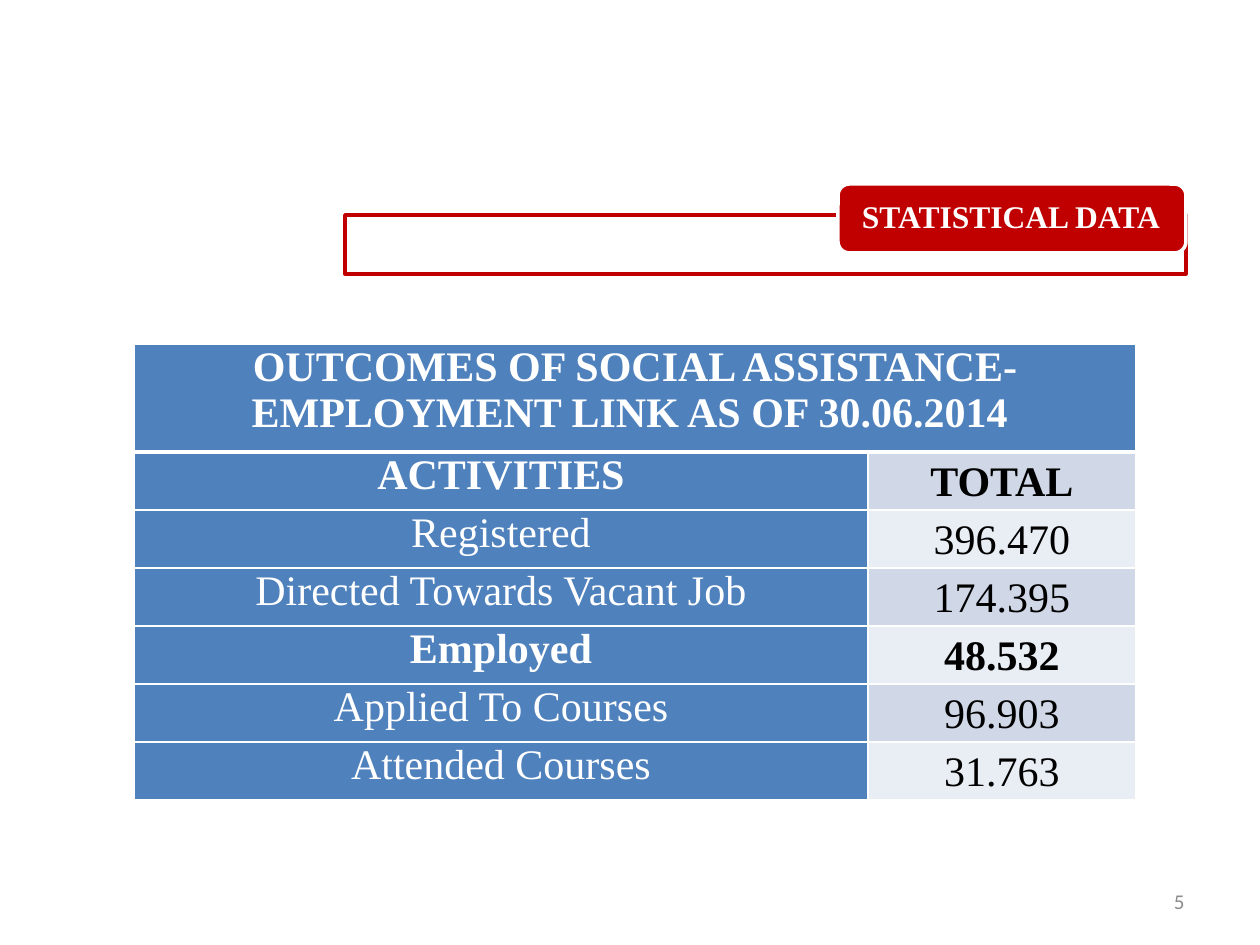
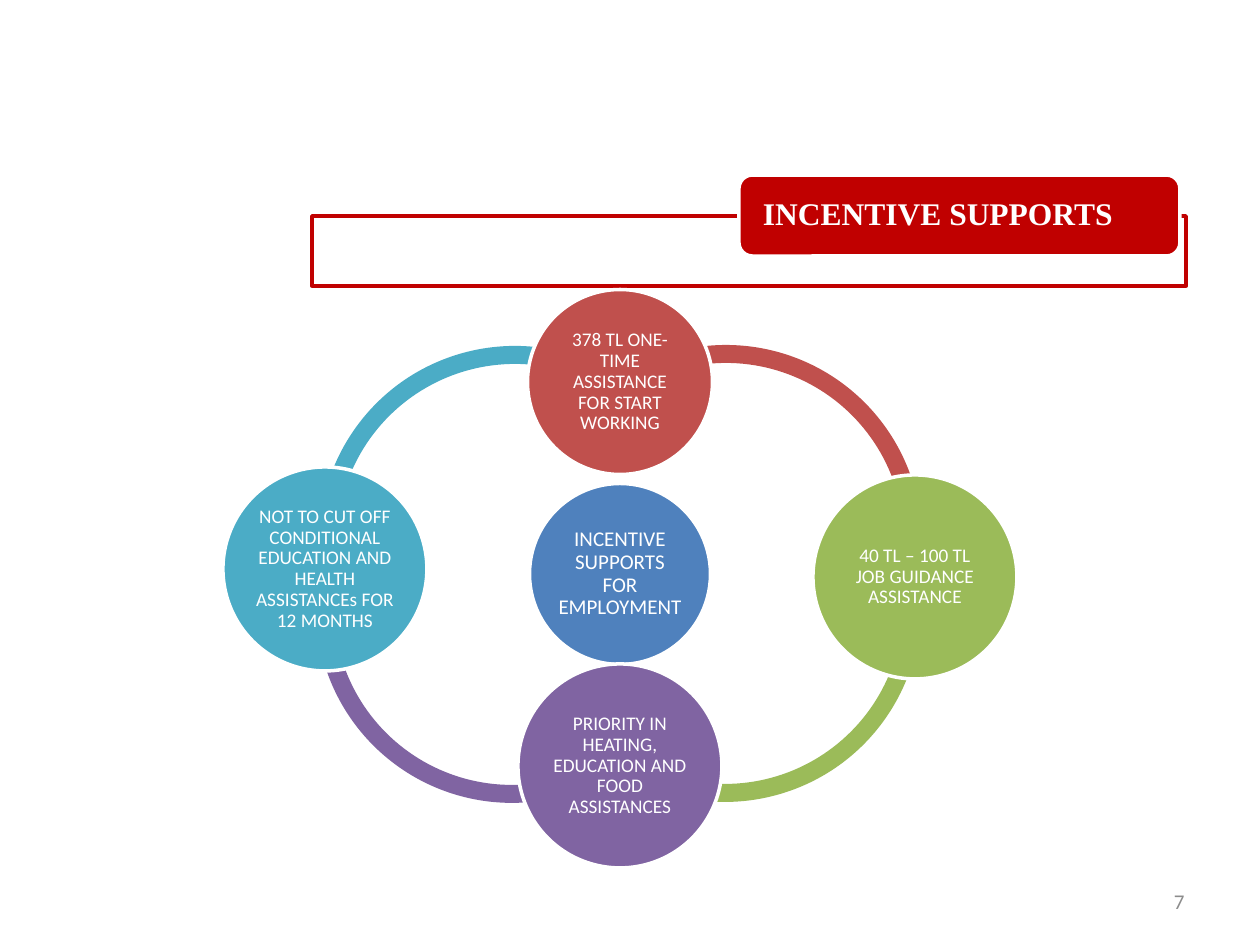
from lxml import etree
from pptx import Presentation
from pptx import util as u
from pptx.dml.color import RGBColor
from pptx.enum import shapes, text
from pptx.oxml import ns

SERIF, SANS = "Times New Roman", "Calibri"
WHITE, BLACK, GREY = "FFFFFF", "000000", "8C8C8C"
CRIMSON, BLUE, RED = "C00000", "4F81BD", "C0504D"
GREEN, PURPLE, TEAL = "9BBB59", "8064A2", "4BACC6"
BANDS = ("D0D8E8", "E9EDF4")
LEFT, MID, RIGHT = text.PP_ALIGN.LEFT, text.PP_ALIGN.CENTER, text.PP_ALIGN.RIGHT
KIND = shapes.MSO_SHAPE

RING, WIDTH = 392, 18
ARCS = [
    (319, 346, 172, 303, TEAL),
    (316, 411, 56, 191, PURPLE),
    (529, 410, 352, 123, GREEN),
    (530, 345, 236, 11, RED),
]
NODES = [
    (620, 574, 181, BLUE, 12, "INCENTIVE SUPPORTS FOR EMPLOYMENT"),
    (620, 382, 185, RED, 11, "378 TL ONE-TIME ASSISTANCE FOR START WORKING"),
    (915, 577, 204, GREEN, 11, "40 TL – 100 TL JOB GUIDANCE ASSISTANCE"),
    (620, 766, 204, PURPLE, 11, "PRIORITY IN HEATING, EDUCATION AND FOOD ASSISTANCES"),
    (325, 569, 204, TEAL, 11,
     "NOT TO CUT OFF CONDITIONAL EDUCATION AND HEALTH ASSISTANCEs FOR 12 MONTHS"),
]
HEAD = "OUTCOMES OF SOCIAL ASSISTANCE-EMPLOYMENT LINK AS OF 30.06.2014 "
ROWS = [
    ("ACTIVITIES", "TOTAL"),
    ("Registered", "396.470"),
    ("Directed Towards Vacant Job", "174.395"),
    ("Employed", "48.532"),
    ("Applied To Courses", "96.903"),
    ("Attended Courses", "31.763"),
]
STRONG = ("ACTIVITIES", "Employed")


def px(num):
    """Turn px into EMU at 126 px to the inch."""
    return u.Emu(round(num * 914400 / 126))


def rgb(code):
    """Turn a hex string into a colour."""
    return RGBColor.from_string(code)


def write(frame, words, size, color, font=SANS, bold=False, align=MID, space=None):
    """Set one formatted paragraph and return it."""
    frame.text = words
    frame.word_wrap = True
    para = frame.paragraphs[0]
    para.alignment = align
    para.line_spacing = space
    for run in para.runs:
        run.font.size = u.Pt(size)
        run.font.name = font
        run.font.bold = bold
        run.font.color.rgb = rgb(color)
    return para


def pad(frame, side, top):
    """Set the insets of a text frame and centre it vertically."""
    frame.margin_left = frame.margin_right = px(side)
    frame.margin_top = frame.margin_bottom = px(top)
    frame.vertical_anchor = text.MSO_ANCHOR.MIDDLE


def draw(slide, kind, box, fill, line=None):
    """Add a flat preset shape."""
    shape = slide.shapes.add_shape(kind, *map(px, box))
    shape.shadow.inherit = False
    shape.fill.solid()
    shape.fill.fore_color.rgb = rgb(fill)
    if line:
        shape.line.color.rgb = rgb(line)
        shape.line.width = u.Pt(2)
    else:
        shape.line.fill.background()
    return shape


def start(deck, words, frame, tab, page):
    """Add a slide with its framed title tab and page number."""
    slide = deck.slides.add_slide(deck.slide_layouts[5])
    draw(slide, KIND.RECTANGLE, frame, WHITE, CRIMSON)
    draw(slide, KIND.ROUNDED_RECTANGLE, tab, CRIMSON, WHITE)
    left, top, wide, high = tab
    title = slide.shapes.title
    title.left, title.top = px(left + 3), px(top + 3)
    title.width, title.height = px(wide - 6), px(high - 6)
    write(title.text_frame, words, 18, WHITE, SERIF, True, LEFT, 0.9)
    title.text_frame.auto_size = text.MSO_AUTO_SIZE.NONE
    pad(title.text_frame, 21, 0)
    slide.shapes.element.append(title.element)
    note = slide.shapes.add_textbox(px(903), px(876), px(294), px(50))
    write(note.text_frame, page, 12, GREY, align=RIGHT)
    note.text_frame.vertical_anchor = text.MSO_ANCHOR.MIDDLE
    return slide


def edge(cell, top, low):
    """Give a cell white borders, with top and bottom widths in points."""
    props = cell._tc.get_or_add_tcPr()
    for side, wide in zip("LRTB", (1, 1, top, low)):
        line = etree.SubElement(props, ns.qn(f"a:ln{side}"), w=str(u.Pt(wide)))
        fill = etree.SubElement(line, ns.qn("a:solidFill"))
        etree.SubElement(fill, ns.qn("a:srgbClr"), val=WHITE)


def fill_cell(cell, words, fill, color, bold, top=1, low=1):
    """Style a table cell and write its text."""
    edge(cell, top, low)
    cell.fill.solid()
    cell.fill.fore_color.rgb = rgb(fill)
    cell.margin_left = cell.margin_right = px(11)
    cell.margin_top = cell.margin_bottom = 0
    return write(cell.text_frame, words, 24, color, SERIF, bold)


def add_grid(slide):
    """Add the table of outcomes."""
    shape = slide.shapes.add_table(len(ROWS) + 1, 2, px(134), px(344), px(1002), px(426))
    grid = shape.table
    for col, wide in zip(grid.columns, (734, 268)):
        col.width = px(wide)
    for num, row in enumerate(grid.rows):
        row.height = px(53 if num else 108)
    for col, words in enumerate((HEAD, "")):
        fill_cell(grid.cell(0, col), words, BLUE, WHITE, True, low=3)
    grid.cell(0, 0).merge(grid.cell(0, 1))
    for num, (label, total) in enumerate(ROWS, 1):
        bold, top = label in STRONG, 3 if num == 1 else 1
        fill_cell(grid.cell(num, 0), label, BLUE, WHITE, bold, top)
        para = fill_cell(grid.cell(num, 1), total, BANDS[(num - 1) % 2], BLACK, bold, top)
        para.line_spacing = 1.15


def add_arc(slide, left, top, begin, end, color):
    """Add a ring segment between two angles in degrees."""
    arc = draw(slide, KIND.BLOCK_ARC, (left, top, RING, RING), color)
    for num, value in enumerate((begin * 0.6, end * 0.6, WIDTH / RING)):
        arc.adjustments[num] = value


def add_node(slide, mid, row, size, color, points, words):
    """Add a labelled circle around a centre."""
    node = draw(slide, KIND.OVAL, (mid - size / 2, row - size / 2, size, size), color, WHITE)
    write(node.text_frame, words, points, WHITE, space=0.9)
    pad(node.text_frame, 2, 2)


def main():
    """Build both slides and save the deck."""
    deck = Presentation()
    deck.slide_width, deck.slide_height = px(1260), px(945)
    slide = start(deck, "STATISTICAL DATA", (345, 215, 841, 59), (838, 184, 348, 69), "5")
    add_grid(slide)
    slide = start(deck, "INCENTIVE SUPPORTS", (312, 216, 874, 70), (739, 175, 441, 81), "7")
    for arc in ARCS:
        add_arc(slide, *arc)
    for node in NODES:
        add_node(slide, *node)
    deck.save("out.pptx")


if __name__ == "__main__":
    main()
